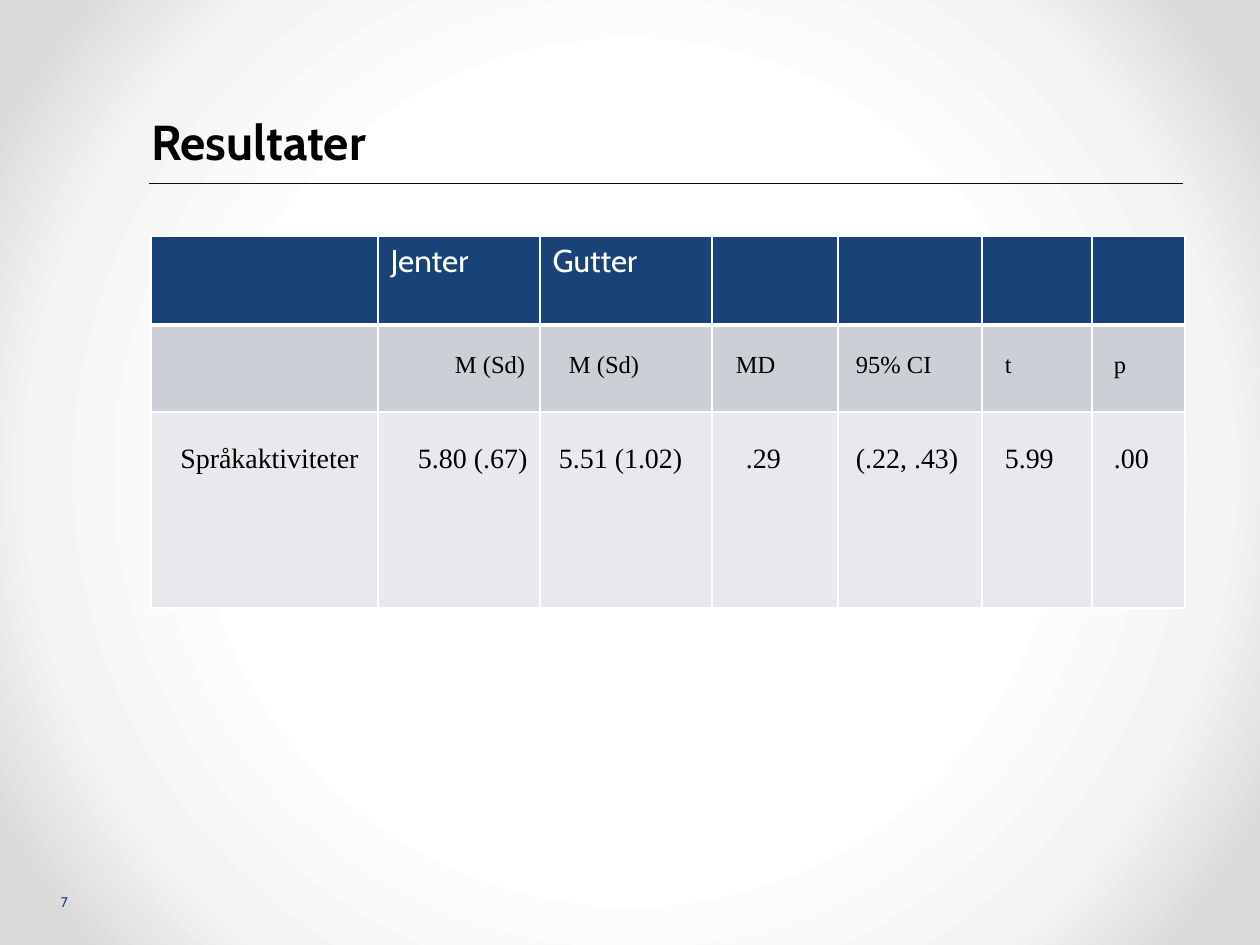
"""Build the results slide with its table of group means."""
from lxml.etree import SubElement, fromstring
from pptx import Presentation
from pptx.dml.color import RGBColor
from pptx.enum.shapes import MSO_CONNECTOR
from pptx.enum.text import MSO_ANCHOR, PP_ALIGN
from pptx.oxml.ns import nsdecls, qn
from pptx.util import Emu, Pt


def px(n):
    return Emu(round(n * 914400 / 126))


def style(para, size, face, color, bold=False, align=PP_ALIGN.LEFT):
    para.alignment = align
    form = {"size": Pt(size), "name": face, "bold": bold}
    for key, val in form.items():
        setattr(para.font, key, val)
    para.font.color.rgb = RGBColor.from_string(color)


deck = Presentation()
deck.slide_width, deck.slide_height = px(1260), px(945)
slide = deck.slides.add_slide(deck.slide_layouts[5])
shapes = slide.shapes

stops = "".join(
    f'<a:gs pos="{pos}000"><a:srgbClr val="{tint}"/></a:gs>'
    for pos, tint in [(50, "FFFFFF"), (76, "F4F4F4"), (92, "DADADA")]
)
slide.element.cSld.insert(0, fromstring(
    f'<p:bg {nsdecls("p", "a")}><p:bgPr><a:gradFill rotWithShape="1">'
    f'<a:gsLst>{stops}</a:gsLst><a:path path="circle">'
    '<a:fillToRect l="50000" t="50000" r="50000" b="50000"/></a:path>'
    '</a:gradFill><a:effectLst/></p:bgPr></p:bg>'
))

rule = shapes.add_connector(
    MSO_CONNECTOR.STRAIGHT, px(149), px(183), px(1183), px(183))
rule.line.color.rgb = RGBColor.from_string("0D0D0D")
rule.line.width = Pt(0.25)
SubElement(rule.element.spPr, qn("a:effectLst"))

title = shapes.title
number = shapes.add_textbox(0, 0, 0, 0)
labels = [
    (title, "Resultater", (151, 15, 1034, 155), MSO_ANCHOR.BOTTOM,
     (28, "Cabin", "000000", True)),
    (number, "7", (15, 893, 53, 16), MSO_ANCHOR.TOP,
     (8, "Cabin", "194377", False, PP_ALIGN.RIGHT)),
]
for shape, text, box, anchor, look in labels:
    for key, val in zip(("left", "top", "width", "height"), box):
        setattr(shape, key, px(val))
    frame = shape.text_frame
    frame.text = text
    form = {"margin_left": 0, "margin_right": 0, "margin_top": 0,
            "margin_bottom": 0, "word_wrap": True, "vertical_anchor": anchor}
    for key, val in form.items():
        setattr(frame, key, val)
    style(frame.paragraphs[0], *look)

rows = [
    ["", "Jenter", "Gutter", "", "", "", ""],
    ["", "M (Sd)", "M (Sd)", "MD", "95% CI", "t", "p"],
    ["Språkaktiviteter", "5.80 (.67)", "5.51 (1.02)", ".29",
     "(.22, .43)", "5.99", ".00"],
]
looks = [
    (18, "Cabin", "FFFFFF"),
    (14, "Times New Roman", "000000"),
    (16, "Times New Roman", "000000"),
]
fills = ["194377", "CCCFD6", "E8E9EC"]
indents = [
    [0] * 7,
    [0, 68, 20, 15, 9, 14, 13],
    [10, 31, 10, 25, 9, 14, 13],
]
widths = [227, 162, 172, 126, 144, 110, 93]
heights = [89, 87, 196]

table = shapes.add_table(
    3, 7, px(151), px(236), px(sum(widths)), px(sum(heights))).table
for col, width in zip(table.columns, widths):
    col.width = px(width)
for row, height in zip(table.rows, heights):
    row.height = px(height)

for r, texts in enumerate(rows):
    for c, text in enumerate(texts):
        cell = table.cell(r, c)
        props = cell._tc.get_or_add_tcPr()
        for side in "LRTB":
            width = 3 if r == 0 and side == "B" else 1
            edge = SubElement(props, qn(f"a:ln{side}"), w=str(Pt(width)))
            fill = SubElement(edge, qn("a:solidFill"))
            SubElement(fill, qn("a:srgbClr"), val="FFFFFF")
        cell.fill.solid()
        cell.fill.fore_color.rgb = RGBColor.from_string(fills[r])
        if not text:
            continue
        cell.text = text
        para = cell.text_frame.paragraphs[0]
        align = PP_ALIGN.JUSTIFY if r == 1 else PP_ALIGN.LEFT
        if c == 0:
            align = PP_ALIGN.CENTER
        style(para, *looks[r], align=align)
        if r:
            para.line_spacing = 2.0
            para._p.get_or_add_pPr().set("marL", str(px(indents[r][c])))
            form = {"margin_left": px(9), "margin_right": px(9),
                    "margin_top": 0, "margin_bottom": 0}
            for key, val in form.items():
                setattr(cell, key, val)

deck.save("out.pptx")
